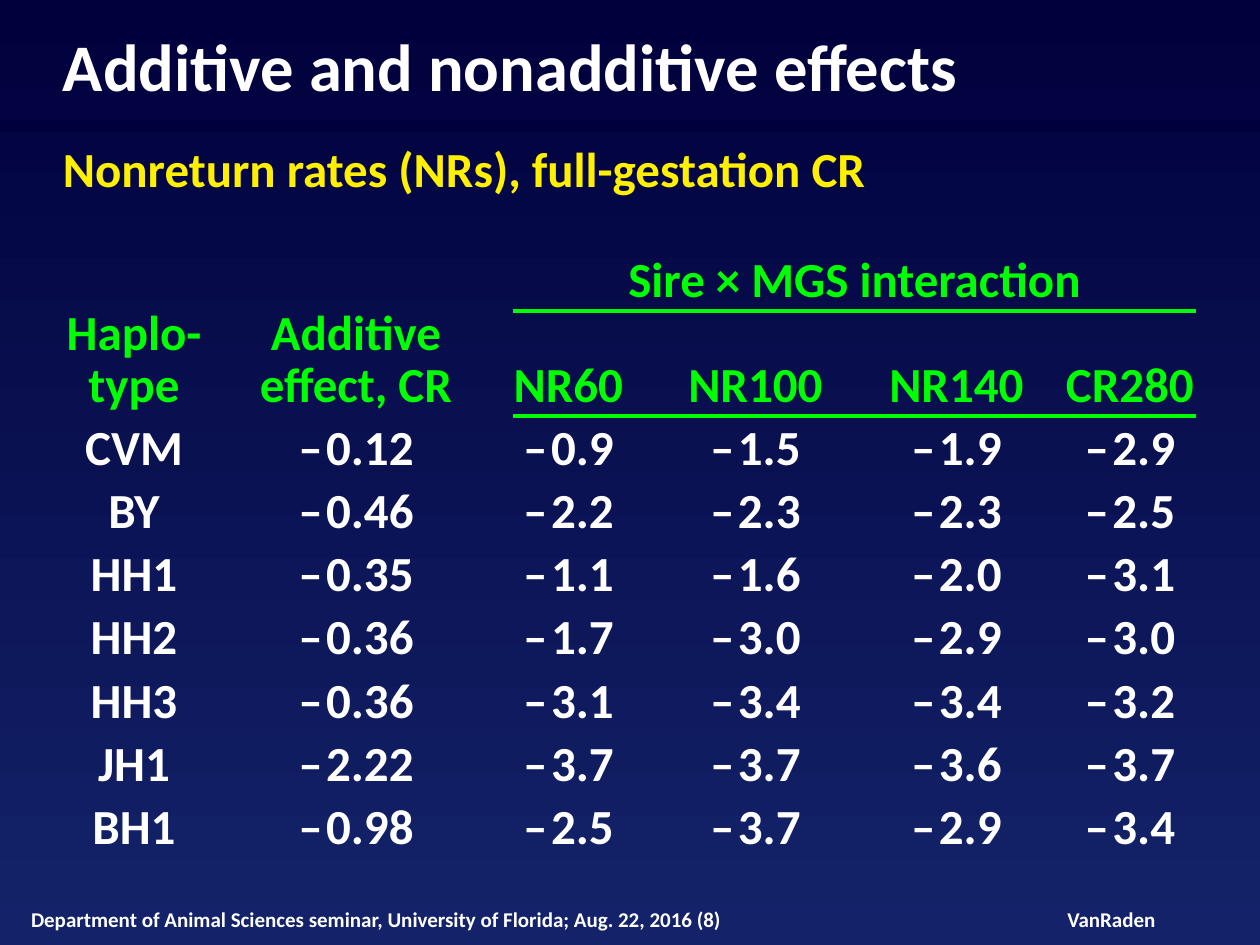
from lxml import etree
from pptx import Presentation
from pptx.dml.color import RGBColor
from pptx.enum.shapes import MSO_CONNECTOR
from pptx.enum.text import MSO_ANCHOR, PP_ALIGN
from pptx.oxml import parse_xml
from pptx.oxml.ns import nsdecls, qn
from pptx.util import Emu, Pt

LEFT, CENTER = PP_ALIGN.LEFT, PP_ALIGN.CENTER
TOP, MIDDLE, BOTTOM = MSO_ANCHOR.TOP, MSO_ANCHOR.MIDDLE, MSO_ANCHOR.BOTTOM
STRAIGHT = MSO_CONNECTOR.STRAIGHT
WHITE = RGBColor(0xFF, 0xFF, 0xFF)
YELLOW = RGBColor(0xFF, 0xF0, 0x00)
GREEN = RGBColor(0x00, 0xFF, 0x00)
NAVY = RGBColor(0x00, 0x00, 0x3C)
BLUE = RGBColor(0x14, 0x23, 0x69)
FONT = "Calibri"
NO_STYLE = "{2D5ABB26-0587-4C30-8999-92F81FD0307C}"

# Content
TITLE = "Additive and nonadditive effects"
SUBTITLE = "Nonreturn rates (NRs), full-gestation CR"
SEMINAR = "Department of Animal Sciences seminar, University of Florida; Aug. 22, 2016 (8)"
AUTHOR = "VanRaden"
ROW_HEADERS = [["Haplo-", "type"], ["Additive effect, CR"]]
GROUP_HEADER = "Sire × MGS interaction"
TRAITS = ["NR60", "NR100", "NR140", "CR280"]
EFFECTS = [
    ("CVM", "0.12", "0.9", "1.5", "1.9", "2.9"),
    ("BY", "0.46", "2.2", "2.3", "2.3", "2.5"),
    ("HH1", "0.35", "1.1", "1.6", "2.0", "3.1"),
    ("HH2", "0.36", "1.7", "3.0", "2.9", "3.0"),
    ("HH3", "0.36", "3.1", "3.4", "3.4", "3.2"),
    ("JH1", "2.22", "3.7", "3.7", "3.6", "3.7"),
    ("BH1", "0.98", "2.5", "3.7", "2.9", "3.4"),
]  # every effect is negative

# Layout in px
COLUMN_WIDTHS = [168, 295, 111, 225, 215, 132]
HEADER_HEIGHT, BODY_HEIGHT = 56, 63
LEFT_INSETS = {3: 38}
RIGHT_INSETS = {1: 19}
FIRST_TRAIT = 2


def px(length):
    return Emu(length * 914400 // 126)


def add_run(paragraph, text, size, color):
    run = paragraph.add_run()
    run.text = text
    run.font.name, run.font.size, run.font.bold = FONT, Pt(size), True
    run.font.color.rgb = color
    return run


def add_box(slide, x, y, width, height, lines, align=LEFT, anchor=TOP, wrap=True):
    frame = slide.shapes.add_textbox(px(x), px(y), px(width), px(height)).text_frame
    frame.margin_left = frame.margin_right = frame.margin_top = frame.margin_bottom = 0
    frame.word_wrap, frame.vertical_anchor = wrap, anchor
    for i, (text, size, color, gap) in enumerate(lines):
        paragraph = frame.add_paragraph() if i else frame.paragraphs[0]
        paragraph.alignment = align
        if gap:
            paragraph.space_before = Pt(gap)
        add_run(paragraph, text, size, color)


def fill_cell(cell, column, lines, color, spacing, anchor=TOP, negative=False):
    cell.margin_left = px(LEFT_INSETS.get(column, 0))
    cell.margin_right = px(RIGHT_INSETS.get(column, 0))
    cell.margin_top = cell.margin_bottom = 0
    cell.vertical_anchor = anchor
    for i, text in enumerate(lines):
        frame = cell.text_frame
        paragraph = frame.add_paragraph() if i else frame.paragraphs[0]
        paragraph.alignment, paragraph.line_spacing = CENTER, Pt(spacing)
        if negative:
            sign = add_run(paragraph, "–", 28, color)
            sign.font._element.set("spc", "200")
        add_run(paragraph, text, 28, color)


def add_border(cell, side):
    border = parse_xml(
        f'<a:{side} {nsdecls("a")} w="{Pt(2.25)}"><a:solidFill>'
        f'<a:srgbClr val="{GREEN}"/></a:solidFill></a:{side}>')
    cell._tc.get_or_add_tcPr().insert(0, border)


def add_effects_table(slide):
    heights = [HEADER_HEIGHT] * 2 + [BODY_HEIGHT] * len(EFFECTS)
    table = slide.shapes.add_table(
        len(heights), len(COLUMN_WIDTHS), px(50), px(255),
        px(sum(COLUMN_WIDTHS)), px(sum(heights))).table
    table.first_row = table.horz_banding = False
    table._tbl.tblPr.find(qn("a:tableStyleId")).text = NO_STYLE
    for column, width in zip(table.columns, COLUMN_WIDTHS):
        column.width = px(width)
    for row, height in zip(table.rows, heights):
        row.height = px(height)
    for cell in table.iter_cells():
        cell.fill.background()

    # Headers
    for c, lines in enumerate(ROW_HEADERS):
        table.cell(0, c).merge(table.cell(1, c))
        fill_cell(table.cell(0, c), c, lines, GREEN, 30, BOTTOM)
    table.cell(0, FIRST_TRAIT).merge(table.cell(0, len(COLUMN_WIDTHS) - 1))
    fill_cell(table.cell(0, FIRST_TRAIT), FIRST_TRAIT, [GROUP_HEADER], GREEN, 32)
    for c, trait in enumerate(TRAITS, FIRST_TRAIT):
        fill_cell(table.cell(1, c), c, [trait], GREEN, 32, BOTTOM)
        add_border(table.cell(0, c), "lnB")
        add_border(table.cell(1, c), "lnT")

    # Haplotype rows
    for r, effects in enumerate(EFFECTS, 2):
        for c, text in enumerate(effects):
            fill_cell(table.cell(r, c), c, [text], WHITE, 36, negative=c > 0)


def main():
    deck = Presentation()
    deck.slide_width, deck.slide_height = px(1260), px(945)
    slide = deck.slides.add_slide(deck.slide_layouts[6])

    # Background, dark at the top
    background = slide.background.fill
    background.gradient()
    background.gradient_angle = 270
    for stop, color in zip(background.gradient_stops, (NAVY, BLUE)):
        stop.color.rgb = color

    # Band under the title
    band = slide.shapes.add_connector(STRAIGHT, 0, px(126), px(1260), px(126))
    band.line.color.rgb, band.line.width = NAVY, Pt(6.5)
    etree.SubElement(band._element.spPr, qn("a:effectLst"))

    # Footer
    add_box(slide, 1067, 907, 89, 25, [(AUTHOR, 12, WHITE, 0)], CENTER, MIDDLE, False)
    add_box(slide, 31, 907, 777, 25, [(SEMINAR, 12, WHITE, 0)], LEFT, MIDDLE)

    # Title and table
    add_box(slide, 63, 25, 1134, 174,
            [(TITLE, 38, WHITE, 0), (SUBTITLE, 28, YELLOW, 19.5)])
    add_effects_table(slide)
    deck.save("out.pptx")


if __name__ == "__main__":
    main()
